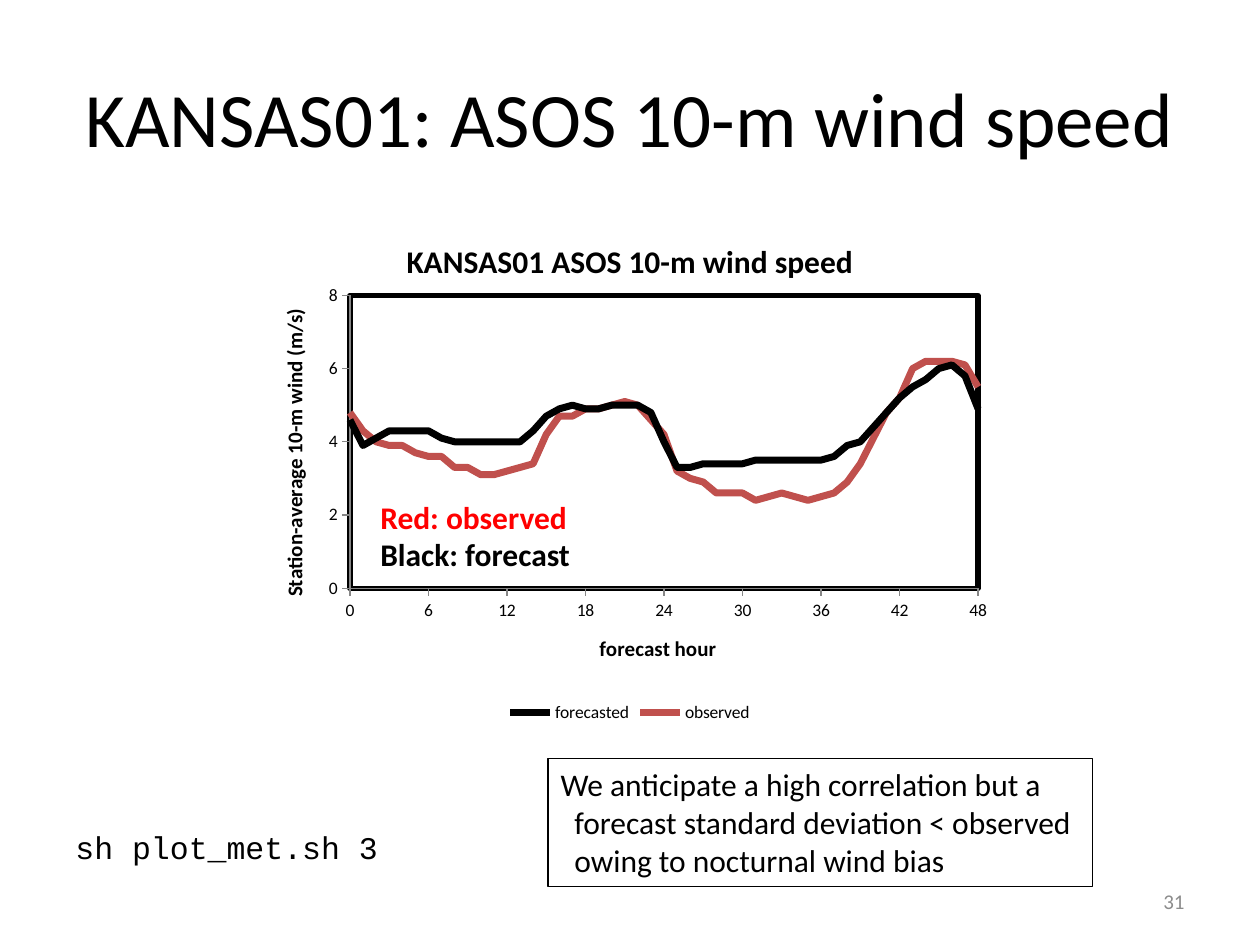
"""Build the wind speed verification slide with its scatter chart and notes."""
from dataclasses import dataclass
from typing import Optional

import pptx
import pptx.chart.data
import pptx.dml.color
import pptx.enum.chart
import pptx.enum.text
import pptx.oxml
import pptx.oxml.ns
import pptx.util


@dataclass(frozen=True)
class Theme:
    body: str = "Calibri"
    code: str = "Courier New"
    black: str = "000000"
    white: str = "FFFFFF"
    red: str = "FF0000"
    brick: str = "C0504D"
    axis_gray: str = "868686"
    number_gray: str = "8C8C8C"
    title: float = 44
    text: float = 18
    small: float = 12
    tick: float = 10
    curve: float = 4
    frame: float = 3
    hairline: float = 0.75


@dataclass(frozen=True)
class Area:
    """Position and size as shares of the slide."""
    left: float
    top: float
    width: float
    height: float


@dataclass(frozen=True)
class Line:
    text: str
    color: str
    hang: float = 0


@dataclass(frozen=True)
class Note:
    area: Area
    lines: tuple[Line, ...]
    font: str
    size: float
    bold: bool = False
    align: str = "LEFT"
    anchor: str = "TOP"
    border: Optional[str] = None


@dataclass(frozen=True)
class Curve:
    name: str
    color: str
    speeds: tuple[float, ...]


THEME = Theme()
WIDTH, HEIGHT = pptx.util.Inches(10), pptx.util.Inches(7.5)
TITLE_AREA = Area(0.05, 0.04, 0.9, 1 / 6)
CHART_AREA = Area(0.206, 0.23, 0.588, 0.54)
PLOT_AREA = Area(0.122, 0.153, 0.848, 0.574)
HANG = 0.11

CURVES = (
    Curve("forecasted", THEME.black, (
        4.6, 3.9, 4.1, 4.3, 4.3, 4.3, 4.3, 4.1, 4, 4, 4, 4, 4, 4, 4.3, 4.7, 4.9,
        5, 4.9, 4.9, 5, 5, 5, 4.8, 4, 3.3, 3.3, 3.4, 3.4, 3.4, 3.4, 3.5, 3.5,
        3.5, 3.5, 3.5, 3.5, 3.6, 3.9, 4, 4.4, 4.8, 5.2, 5.5, 5.7, 6, 6.1, 5.8, 4.9)),
    Curve("observed", THEME.brick, (
        4.8, 4.3, 4, 3.9, 3.9, 3.7, 3.6, 3.6, 3.3, 3.3, 3.1, 3.1, 3.2, 3.3, 3.4,
        4.2, 4.7, 4.7, 4.9, 4.9, 5, 5.1, 5, 4.6, 4.2, 3.2, 3, 2.9, 2.6, 2.6, 2.6,
        2.4, 2.5, 2.6, 2.5, 2.4, 2.5, 2.6, 2.9, 3.4, 4.1, 4.8, 5.2, 6, 6.2, 6.2,
        6.2, 6.1, 5.5)),
)

NOTES = (
    Note(Area(0.292, 0.52, 0.173, 0.095),
         (Line("Red: observed", THEME.red), Line("Black: forecast", THEME.black)),
         THEME.body, THEME.text, bold=True),
    Note(Area(0.05, 0.87, 0.263, 0.053), (Line("sh plot_met.sh 3", THEME.black),),
         THEME.code, THEME.text),
    Note(Area(0.717, 0.927, 0.233, 0.053), (Line("31", THEME.number_gray),),
         THEME.body, THEME.small, align="RIGHT", anchor="MIDDLE"),
    Note(Area(0.435, 0.803, 0.432, 0.135),
         (Line("We anticipate a high correlation but a", THEME.black),
          Line("forecast standard deviation < observed", THEME.black, HANG),
          Line("owing to nocturnal wind bias", THEME.black, HANG)),
         THEME.body, THEME.text, border=THEME.black),
)


def rgb(color: str) -> pptx.dml.color.RGBColor:
    """Turn a hex string into a colour."""
    return pptx.dml.color.RGBColor.from_string(color)


def bounds(area: Area) -> tuple[int, int, int, int]:
    """Turn shares of the slide into lengths."""
    return (round(area.left * WIDTH), round(area.top * HEIGHT),
            round(area.width * WIDTH), round(area.height * HEIGHT))


def style(font, name: str, size: float, color: str, bold: bool = False) -> None:
    """Format one font."""
    font.name, font.size, font.bold = name, pptx.util.Pt(size), bold
    font.color.rgb = rgb(color)


def stroke(line, color: str, width: float) -> None:
    """Format one line."""
    line.color.rgb, line.width = rgb(color), pptx.util.Pt(width)


def add_title(slide, text: str) -> None:
    """Place and fill the title placeholder."""
    box = slide.shapes.title
    box.left, box.top, box.width, box.height = bounds(TITLE_AREA)
    box.text_frame.vertical_anchor = pptx.enum.text.MSO_ANCHOR.MIDDLE
    para = box.text_frame.paragraphs[0]
    para.alignment = pptx.enum.text.PP_ALIGN.CENTER
    span = para.add_run()
    span.text = text
    style(span.font, THEME.body, THEME.title, THEME.black)


def add_note(slide, note: Note) -> None:
    """Draw one text box."""
    box = slide.shapes.add_textbox(*bounds(note.area))
    if note.border:
        stroke(box.line, note.border, THEME.hairline)
    frame = box.text_frame
    frame.word_wrap = note.align == "RIGHT"
    frame.vertical_anchor = pptx.enum.text.MSO_ANCHOR[note.anchor]
    for index, line in enumerate(note.lines):
        para = frame.add_paragraph() if index else frame.paragraphs[0]
        para.alignment = pptx.enum.text.PP_ALIGN[note.align]
        if line.hang:
            para._p.get_or_add_pPr().set("marL", str(pptx.util.Inches(line.hang)))
        span = para.add_run()
        span.text = line.text
        style(span.font, note.font, note.size, line.color, note.bold)


def label(owner, text: str, size: float) -> None:
    """Give a chart or an axis its bold title."""
    owner.has_title = True
    span = owner.chart_title if hasattr(owner, "chart_title") else owner.axis_title
    run = span.text_frame.paragraphs[0].add_run()
    run.text = text
    style(run.font, THEME.body, size, THEME.black, True)


def format_axis(axis, title: str, maximum: float, step: float) -> None:
    """Set the scale, ticks and title of one axis."""
    axis.minimum_scale, axis.maximum_scale, axis.major_unit = 0, maximum, step
    axis.has_major_gridlines = False
    axis.major_tick_mark = pptx.enum.chart.XL_TICK_MARK.OUTSIDE
    axis.minor_tick_mark = pptx.enum.chart.XL_TICK_MARK.NONE
    axis.tick_labels.number_format = "General"
    axis.tick_labels.number_format_is_linked = False
    stroke(axis.format.line, THEME.axis_gray, THEME.hairline)
    label(axis, title, THEME.small)


def frame_plot(chart) -> None:
    """Fix the inner plot position and give it a white fill and black border."""
    plot = chart._chartSpace.chart.plotArea
    for old in plot.findall(pptx.oxml.ns.qn("c:layout")):
        plot.remove(old)
    spaces = pptx.oxml.ns.nsdecls("c", "a")
    places = "".join(f'<c:{tag} val="{value}"/>' for tag, value in (
        ("layoutTarget", "inner"), ("xMode", "edge"), ("yMode", "edge"),
        ("x", PLOT_AREA.left), ("y", PLOT_AREA.top),
        ("w", PLOT_AREA.width), ("h", PLOT_AREA.height)))
    plot.insert(0, pptx.oxml.parse_xml(
        f"<c:layout {spaces}><c:manualLayout>{places}</c:manualLayout></c:layout>"))
    fill = '<a:solidFill><a:srgbClr val="{}"/></a:solidFill>'
    plot.append(pptx.oxml.parse_xml(
        f'<c:spPr {spaces}>{fill.format(THEME.white)}'
        f'<a:ln w="{pptx.util.Pt(THEME.frame)}">{fill.format(THEME.black)}</a:ln></c:spPr>'))


def add_wind_chart(slide) -> None:
    """Draw the forecast and observed wind curves."""
    data = pptx.chart.data.XyChartData()
    for curve in CURVES:
        series = data.add_series(curve.name)
        for hour, speed in enumerate(curve.speeds):
            series.add_data_point(hour, speed)
    kind = pptx.enum.chart.XL_CHART_TYPE.XY_SCATTER_LINES_NO_MARKERS
    chart = slide.shapes.add_chart(kind, *bounds(CHART_AREA), data).chart
    style(chart.font, THEME.body, THEME.tick, THEME.black)
    label(chart, "KANSAS01 ASOS 10-m wind speed", THEME.text)
    chart.has_legend = True
    chart.legend.position = pptx.enum.chart.XL_LEGEND_POSITION.BOTTOM
    chart.legend.include_in_layout = False
    chart.plots[0].vary_by_categories = False
    for series, curve in zip(chart.plots[0].series, CURVES):
        series.smooth = False
        stroke(series.format.line, curve.color, THEME.curve)
    format_axis(chart.category_axis, "forecast hour", 48, 6)
    format_axis(chart.value_axis, "Station-average 10-m wind (m/s)", 8, 2)
    frame_plot(chart)


def main() -> None:
    """Build and save the deck."""
    deck = pptx.Presentation()
    deck.slide_width, deck.slide_height = WIDTH, HEIGHT
    page = deck.slides.add_slide(deck.slide_layouts.get_by_name("Title Only"))
    add_wind_chart(page)
    add_title(page, "KANSAS01: ASOS 10-m wind speed")
    for note in NOTES:
        add_note(page, note)
    deck.save("out.pptx")


if __name__ == "__main__":
    main()
